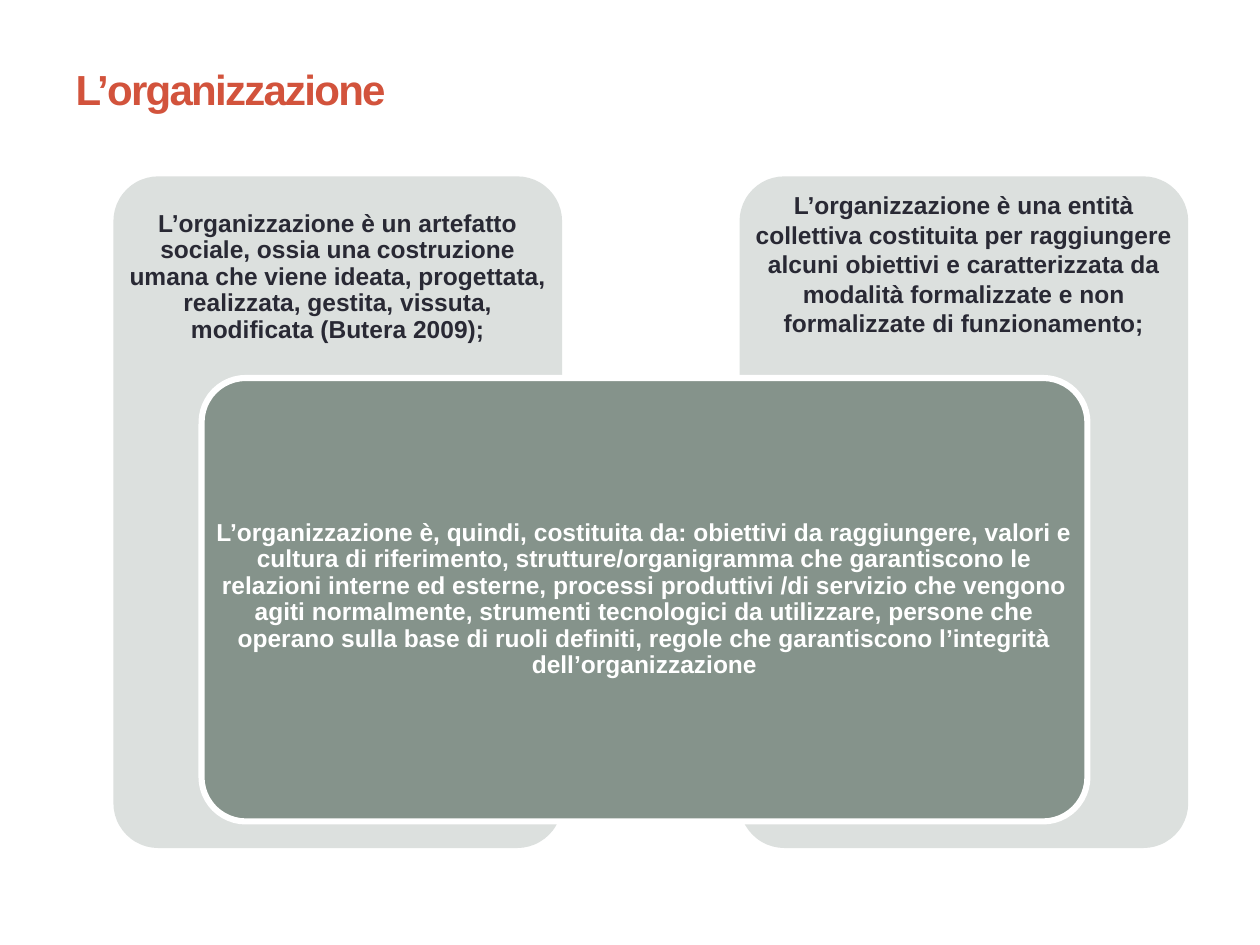
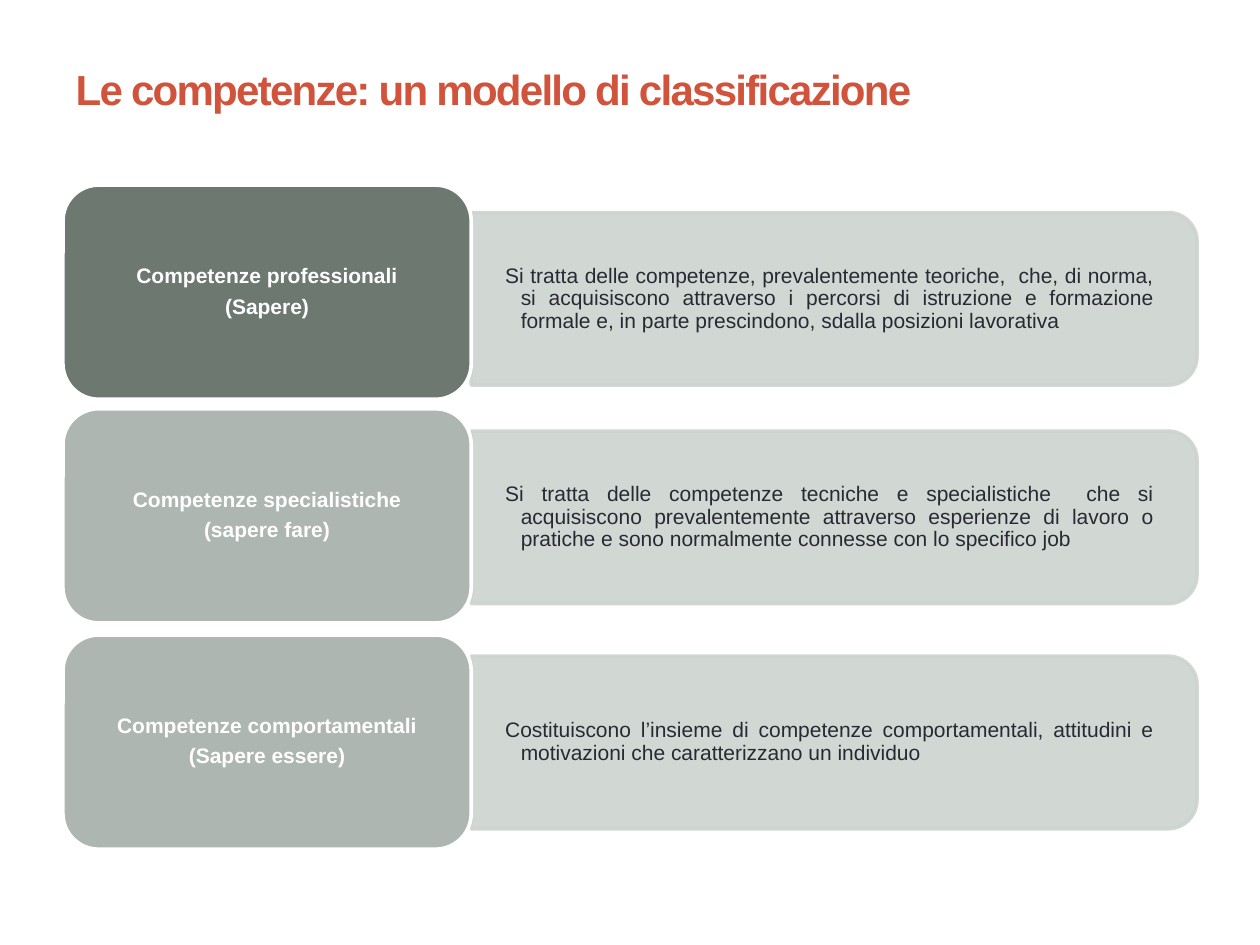
from lxml.etree import SubElement
from pptx import Presentation
from pptx.dml.color import RGBColor
from pptx.enum.shapes import MSO_SHAPE as Preset
from pptx.enum.text import MSO_ANCHOR as Anchor, PP_ALIGN as Align
from pptx.oxml.ns import qn
from pptx.util import Pt

# Shared look
FONT = "Arial"
RED, INK, WHITE = "D2533C", "292934", "FFFFFF"
PANEL, CORE = "DCE0DE", "85938B"
BAR, DARK_LABEL, LABEL = "CDD3CF", "6D7871", "AEB6B1"
color = RGBColor.from_string


def add_box(page, preset, place, fill, line=None, weight=0):
    box = page.shapes.add_shape(preset, *map(Pt, place))
    box.shadow.inherit = False
    box.fill.solid()
    box.fill.fore_color.rgb = color(fill)
    if line:
        box.line.color.rgb = color(line)
        box.line.width = Pt(weight)
    else:
        box.line.fill.background()
    return box


def write(box, text, size=14, ink=INK, bold=True, align=Align.CENTER,
          spacing=0.9, after=0, insets=(7.2, 3.6, 7.2, 3.6), hanging=0, tracking=0):
    frame = box.text_frame
    frame.word_wrap = True
    frame.vertical_anchor = Anchor.MIDDLE
    (frame.margin_left, frame.margin_top,
     frame.margin_right, frame.margin_bottom) = map(Pt, insets)
    for number, line in enumerate(text.split("\n")):
        para = frame.add_paragraph() if number else frame.paragraphs[0]
        para.alignment = align
        para.line_spacing = spacing
        para.space_before = Pt(0)
        para.space_after = Pt(after)
        if hanging:
            props = para._p.get_or_add_pPr()
            props.set("marL", str(Pt(hanging)))
            props.set("indent", str(-Pt(hanging)))
        span = para.add_run()
        span.text = line
        span.font.name = FONT
        span.font.size = Pt(size)
        span.font.bold = bold
        span.font.color.rgb = color(ink)
        if tracking:
            span._r.get_or_add_rPr().set("spc", str(tracking * 100))


deck = Presentation()
deck.slide_width, deck.slide_height = Pt(720), Pt(540)

# Pages with their titles
pages = []
for heading in ("L’organizzazione", "Le competenze: un modello di classificazione"):
    page = deck.slides.add_slide(deck.slide_layouts[5])
    title = page.shapes.title
    title.left, title.top, title.width, title.height = map(Pt, (36, 27.4, 648, 46.8))
    write(title, heading, size=24, ink=RED, align=Align.LEFT, spacing=1, tracking=-1)
    pages.append(page)
organization, skills = pages

# Organization: two side panels, text in their upper part
# (left edge, line spacing, bottom inset, text)
panels = [
    (422.6, 1, 23, "L’organizzazione è una entità collettiva costituita per raggiungere "
     "alcuni obiettivi e caratterizzata da modalità formalizzate e non formalizzate "
     "di funzionamento;"),
    (64.8, 0.9, 8, "L’organizzazione è un artefatto sociale, ossia una costruzione umana "
     "che viene ideata, progettata, realizzata, gestita, vissuta, modificata "
     "(Butera 2009);"),
]
for left, spacing, bottom, text in panels:
    panel = add_box(organization, Preset.ROUNDED_RECTANGLE, (left, 100.8, 256.4, 383.8), PANEL)
    panel.adjustments[0] = 0.1
    caption = organization.shapes.add_textbox(*map(Pt, (left, 100.8, 256.4, 115.2)))
    write(caption, text, spacing=spacing, insets=(8, 8, 8, bottom))

# Organization: central box over both panels
core = add_box(organization, Preset.ROUNDED_RECTANGLE, (115.2, 216, 506.2, 253.4),
               CORE, WHITE, 3.5)
core.adjustments[0] = 0.1
write(core, "L’organizzazione è, quindi, costituita da: obiettivi da raggiungere, valori e "
      "cultura di riferimento, strutture/organigramma che garantiscono le relazioni interne "
      "ed esterne, processi produttivi /di servizio che vengono agiti normalmente, strumenti "
      "tecnologici da utilizzare, persone che operano sulla base di ruoli definiti, regole "
      "che garantiscono l’integrità dell’organizzazione", ink=WHITE, insets=(1, 1, 1, 1))

# Skills: a bar with the description and a label for each kind
# (label top, bar middle, label fill, label, description)
rows = [
    (105.8, 170.8, DARK_LABEL, "Competenze professionali\n(Sapere)",
     "Si tratta delle competenze, prevalentemente teoriche,  che, di norma, si acquisiscono "
     "attraverso i percorsi di istruzione e formazione formale e, in parte prescindono, "
     "sdalla posizioni lavorativa"),
    (233.6, 295.7, LABEL, "Competenze specialistiche\n(sapere fare)",
     "Si tratta delle competenze tecniche e specialistiche  che si acquisiscono "
     "prevalentemente attraverso esperienze di lavoro o pratiche e sono normalmente "
     "connesse con lo specifico job"),
    (362.9, 424.3, LABEL, "Competenze comportamentali\n(Sapere essere)",
     "Costituiscono l’insieme di competenze comportamentali, attitudini e motivazioni "
     "che caratterizzano un individuo"),
]
BAR_LEFT, BAR_LENGTH, BAR_DEPTH = 269.3, 414.7, 98.6
for label_top, middle, fill, name, description in rows:
    # The bar stands upright, then turns so that its round end points right
    place = (BAR_LEFT + (BAR_LENGTH - BAR_DEPTH) / 2, middle - BAR_LENGTH / 2,
             BAR_DEPTH, BAR_LENGTH)
    bar = add_box(skills, Preset.ROUND_2_SAME_RECTANGLE, place, BAR, BAR, 2.08)
    bar.rotation = 90
    for shade in bar._element.spPr.iter(qn("a:srgbClr")):
        SubElement(shade, qn("a:alpha"), val="90000")
    note = skills.shapes.add_textbox(*map(Pt, (BAR_LEFT, middle - 44.3, 409.7, 88.6)))
    write(note, description, size=12, bold=False, align=Align.JUSTIFY, after=1.8,
          insets=(19.4, 10, 19.4, 10), hanging=8.9)
    label = add_box(skills, Preset.ROUNDED_RECTANGLE, (36, label_top, 233.3, 122.4),
                    fill, WHITE, 2.08)
    write(label, name, size=12, ink=WHITE, after=4.2, insets=(9.6, 8.2, 9.6, 8.2))

deck.save("out.pptx")
